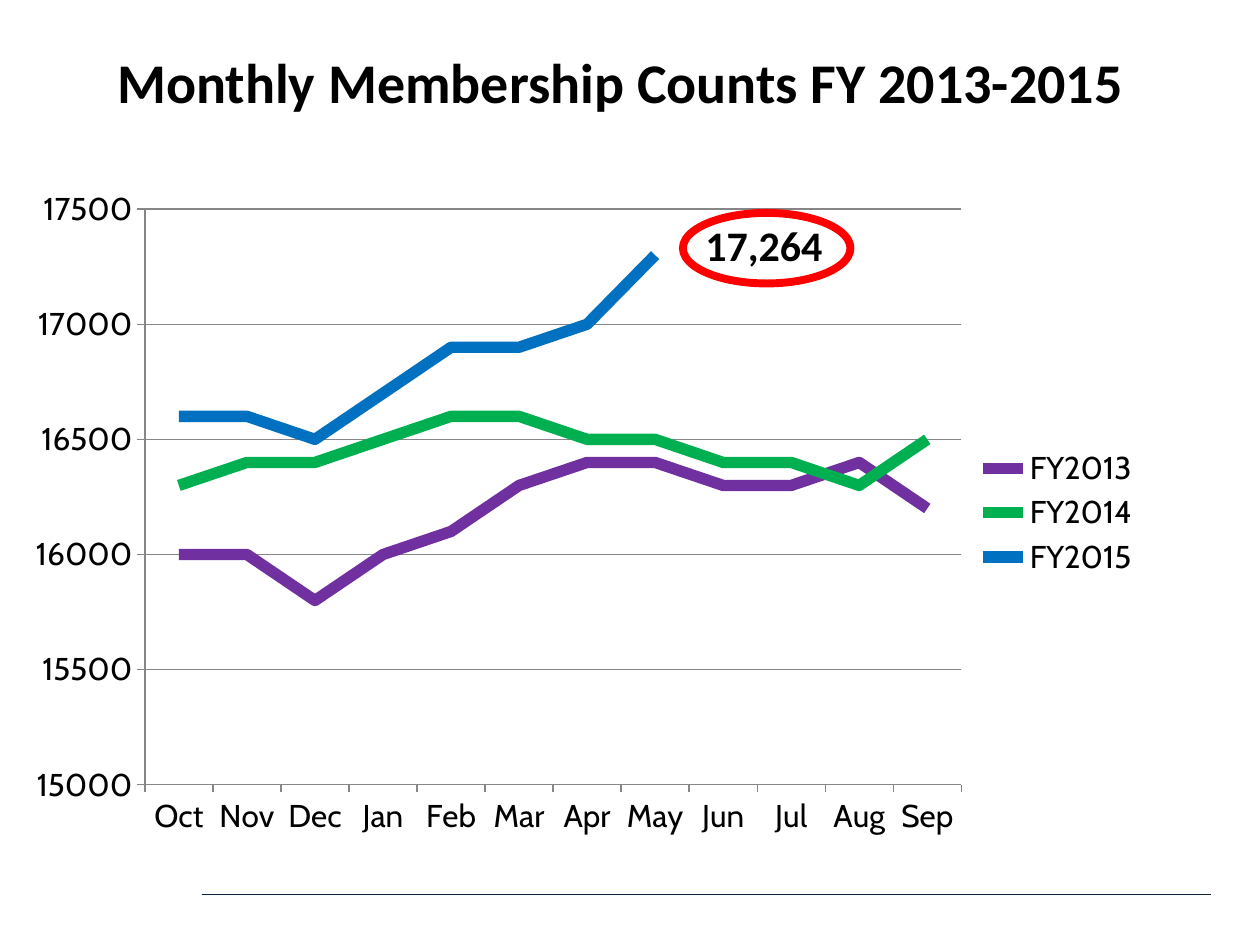
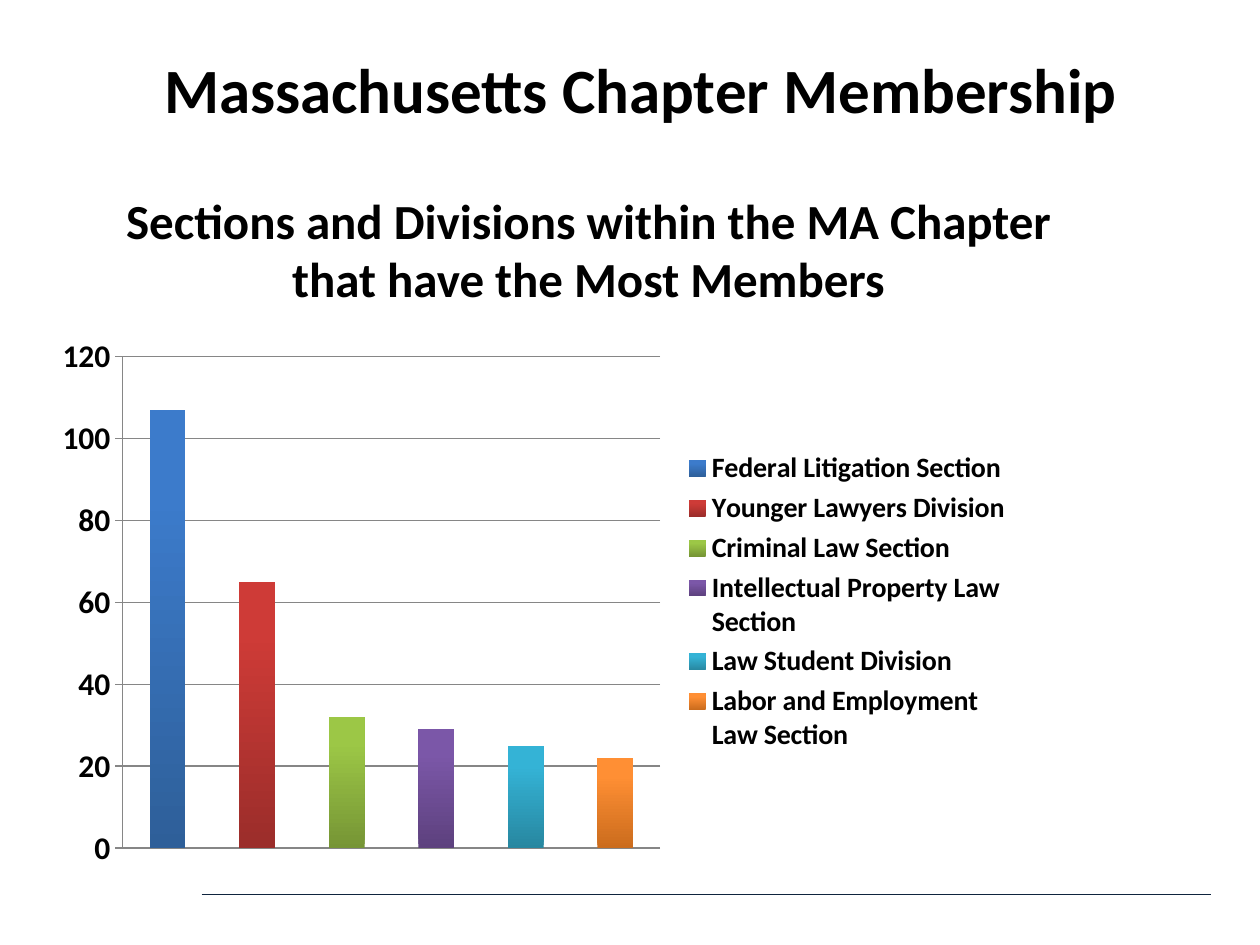
"""Build two membership slides, each with a title, a chart and a foot rule."""
from typing import NamedTuple

from pptx import Presentation
from pptx import util as u
from pptx.chart.data import CategoryChartData
from pptx.dml.color import RGBColor
from pptx.enum import chart as ch, shapes, text
from pptx.oxml import parse_xml
from pptx.oxml.ns import nsdecls

BLACK, GRAY, NAVY, RED = "000000", "868686", "0F243E", "FF0000"
MAIN, ALT = "Calibri", "Cabin"
LEFT, MID = text.PP_ALIGN.LEFT, text.PP_ALIGN.CENTER
MONTHS = "Oct Nov Dec Jan Feb Mar Apr May Jun Jul Aug Sep".split()


class Box(NamedTuple):
    x: float
    y: float
    w: float
    h: float

    def emu(self):
        return [u.Inches(n) for n in self]


class Label(NamedTuple):
    words: str
    box: Box
    size: int
    align: text.PP_ALIGN = MID
    wrap: bool = True


class Year(NamedTuple):
    name: str
    color: str
    counts: list


class Group(NamedTuple):
    name: str
    count: int
    dark: str
    light: str


class Look(NamedTuple):
    face: str
    axis: int
    legend: int
    bold: bool
    low: int
    high: int
    step: int


YEARS = [
    Year("FY2013", "7030A0", [16000, 16000, 15800, 16000, 16100, 16300,
                              16400, 16400, 16300, 16300, 16400, 16200]),
    Year("FY2014", "00B050", [16300, 16400, 16400, 16500, 16600, 16600,
                              16500, 16500, 16400, 16400, 16300, 16500]),
    Year("FY2015", "0070C0", [16600, 16600, 16500, 16700, 16900, 16900,
                              17000, 17300] + [None] * 4),
]
GROUPS = [
    Group("Federal Litigation Section", 107, "2E5F99", "3C7BCB"),
    Group("Younger Lawyers Division", 65, "9B2D2A", "CE3B37"),
    Group("Criminal Law Section", 32, "769535", "9CC746"),
    Group("Intellectual Property Law Section", 29, "5D417E", "7B57A8"),
    Group("Law Student Division", 25, "2787A0", "34B3D6"),
    Group("Labor and Employment Law Section", 22, "CB6C1D", "FF8F34"),
]


def rgb(code: str) -> RGBColor:
    return RGBColor.from_string(code)


def style(font, size: int, face: str = MAIN, bold: bool = True) -> None:
    font.size, font.name, font.bold = u.Pt(size), face, bold
    font.color.rgb = rgb(BLACK)


def stroke(line, color: str, width: float) -> None:
    line.color.rgb = rgb(color)
    line.width = u.Pt(width)


def write(shape, label: Label) -> None:
    shape.left, shape.top, shape.width, shape.height = label.box.emu()
    frame = shape.text_frame
    frame.text = label.words
    frame.word_wrap = label.wrap
    frame.auto_size = text.MSO_AUTO_SIZE.NONE
    frame.vertical_anchor = text.MSO_ANCHOR.TOP
    para = frame.paragraphs[0]
    para.alignment = label.align
    style(para.font, label.size)


def note(slide, label: Label) -> None:
    write(slide.shapes.add_textbox(*label.box.emu()), label)


def start(deck, title: Label):
    slide = deck.slides.add_slide(deck.slide_layouts.get_by_name("Title Only"))
    write(slide.shapes.title, title)
    ends = [u.Inches(n) for n in (1.6, 7.1, 9.61, 7.1)]
    rule = slide.shapes.add_connector(shapes.MSO_CONNECTOR.STRAIGHT, *ends)
    stroke(rule.line, NAVY, 0.75)
    rule.element.spPr.append(parse_xml(f"<a:effectLst {nsdecls('a')}/>"))
    return slide


def plot(slide, kind, box: Box, cats: list, rows: list, look: Look):
    data = CategoryChartData()
    data.categories = cats
    for name, vals in rows:
        data.add_series(name, vals)
    chart = slide.shapes.add_chart(kind, *box.emu(), data).chart
    chart.has_title = False
    style(chart.font, look.axis, MAIN, False)
    chart.has_legend = True
    chart.legend.position = ch.XL_LEGEND_POSITION.RIGHT
    chart.legend.include_in_layout = False
    style(chart.legend.font, look.legend, look.face, look.bold)
    axis = chart.value_axis
    axis.minimum_scale, axis.maximum_scale = look.low, look.high
    axis.major_unit = look.step
    axis.has_major_gridlines = True
    stroke(axis.major_gridlines.format.line, GRAY, 0.75)
    for side in (axis, chart.category_axis):
        side.major_tick_mark = ch.XL_TICK_MARK.OUTSIDE
        style(side.tick_labels.font, look.axis, look.face, look.bold)
        stroke(side.format.line, GRAY, 0.75)
    return chart


def place(chart, outer: Box, inner: Box) -> None:
    area = chart.element.xpath("c:chart/c:plotArea")[0]
    for old in area.xpath("c:layout"):
        area.remove(old)
    modes = '<c:xMode val="edge"/><c:yMode val="edge"/>'
    spans = (outer.w, outer.h) * 2
    sizes = "".join(f'<c:{k} val="{n / span}"/>'
                    for k, n, span in zip("xywh", inner, spans))
    area.insert(0, parse_xml(
        f'<c:layout {nsdecls("c")}><c:manualLayout><c:layoutTarget val="inner"/>'
        f"{modes}{sizes}</c:manualLayout></c:layout>"))


def counts(deck) -> None:
    slide = start(deck, Label("Monthly Membership Counts FY 2013-2015",
                              Box(0.83, 0.33, 8.26, 0.64), 32, LEFT, False))
    box = Box(0.23, 1.43, 8.92, 5.28)
    chart = plot(slide, ch.XL_CHART_TYPE.LINE, box,
                 MONTHS, [(y.name, y.counts) for y in YEARS],
                 Look(ALT, 18, 18, False, 15000, 17500, 500))
    place(chart, box, Box(0.92, 0.23, 6.48, 4.57))
    chart.plots[0].vary_by_categories = False
    for year, row in zip(YEARS, chart.plots[0].series):
        row.smooth = False
        stroke(row.format.line, year.color, 6.5)
    note(slide, Label("17,264", Box(5.5, 1.69, 1.17, 0.5), 24, LEFT))
    ring = slide.shapes.add_shape(shapes.MSO_SHAPE.OVAL,
                                  *Box(5.42, 1.69, 1.33, 0.56).emu())
    ring.shadow.inherit = False
    ring.fill.background()
    stroke(ring.line, RED, 4.5)


def chapter(deck) -> None:
    slide = start(deck, Label("Massachusetts Chapter Membership",
                              Box(0.67, 0.35, 8.83, 0.71), 36))
    note(slide, Label("Sections and Divisions within the MA Chapter "
                      "that have the Most Members",
                      Box(0.59, 1.46, 8.16, 1.04), 28))
    chart = plot(slide, ch.XL_CHART_TYPE.COLUMN_CLUSTERED,
                 Box(0.34, 2.59, 7.79, 4.38), [g.name for g in GROUPS],
                 [("Series 1", [g.count for g in GROUPS])],
                 Look(MAIN, 18, 16, True, 0, 120, 20))
    chart.category_axis.visible = False
    bars = chart.plots[0]
    bars.gap_width = 150
    bars.vary_by_categories = True
    for i, group in enumerate(GROUPS):
        fill = bars.series[0].points[i].format.fill
        fill.gradient()
        fill.gradient_angle = 90
        low, high = fill.gradient_stops
        low.color.rgb, high.color.rgb = rgb(group.dark), rgb(group.light)
        low.position, high.position = 0, 0.8


def main() -> None:
    deck = Presentation()
    deck.slide_width, deck.slide_height = u.Inches(10), u.Inches(7.5)
    counts(deck)
    chapter(deck)
    deck.save("out.pptx")


if __name__ == "__main__":
    main()
